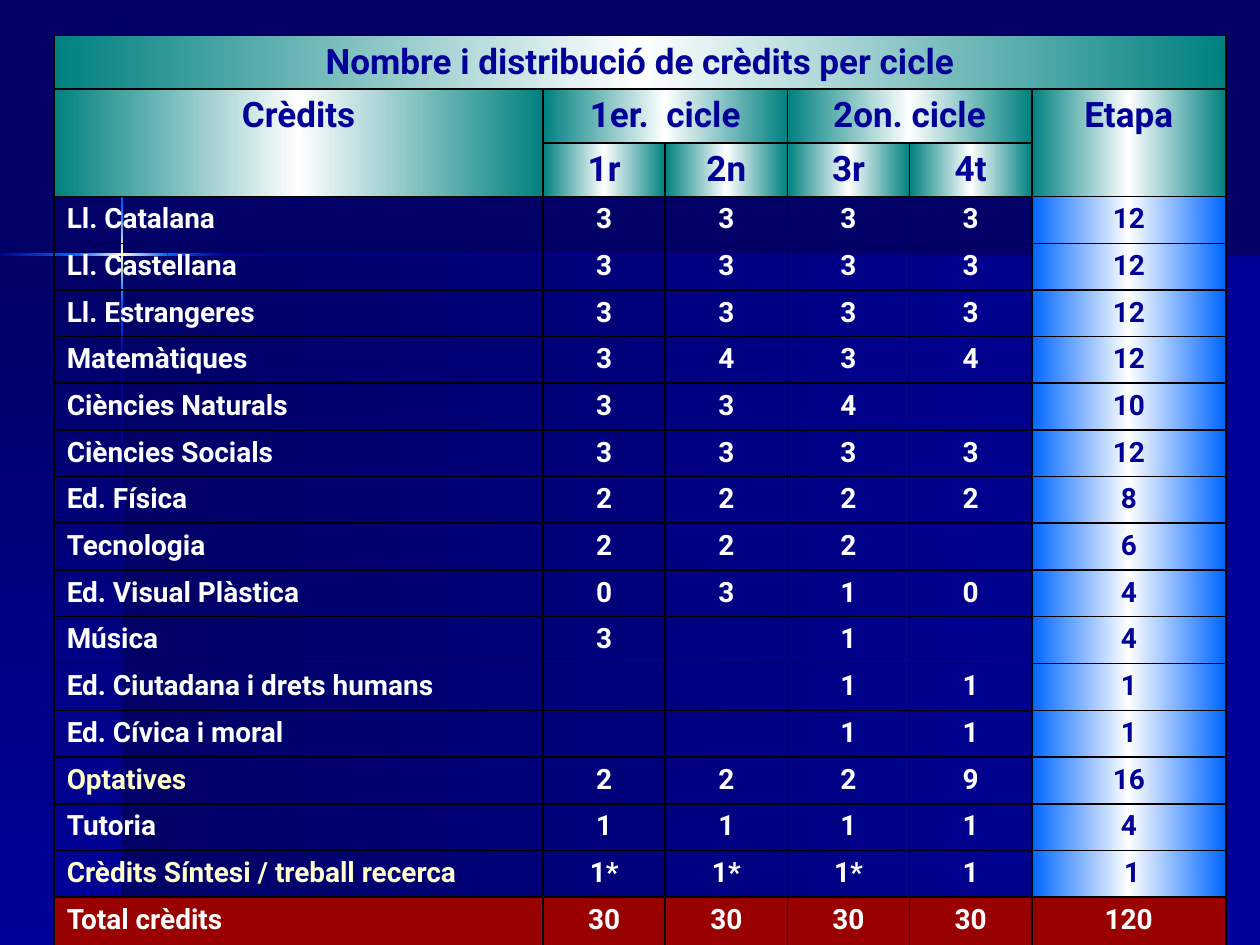
from itertools import pairwise

from lxml import etree
from pptx import Presentation
from pptx.dml.color import RGBColor
from pptx.enum.shapes import MSO_SHAPE
from pptx.enum.text import PP_ALIGN
from pptx.oxml.ns import qn
from pptx.util import Inches, Pt

RECT = MSO_SHAPE.RECTANGLE
CENTER, JUSTIFY = PP_ALIGN.CENTER, PP_ALIGN.JUSTIFY

THEME = {
    "font": "Roboto", "head": 20, "body": 16,
    "night": "000066", "deep": "000099", "bright": "0066FF", "cream": "FFFFCC",
    "white": "FFFFFF", "teal": "008080", "red": "990000", "line": "000000",
}


def gradient(fill, props, names, angle=0):
    fill.gradient()
    grad = props.find(qn("a:gradFill"))
    for child in list(grad):
        grad.remove(child)
    stops = etree.SubElement(grad, qn("a:gsLst"))
    for i, name in enumerate(names):
        stop = etree.SubElement(stops, qn("a:gs"), pos=str(i * 100000 // (len(names) - 1)))
        etree.SubElement(stop, qn("a:srgbClr"), val=THEME[name])
    etree.SubElement(grad, qn("a:lin"), ang=str(angle * 60000), scaled="0")


def write(cell, text, size="body", color="white", align=CENTER):
    p = cell.text_frame.paragraphs[0]
    p.alignment = align
    pPr = p._p.get_or_add_pPr()
    pPr.set("marL", str(Inches(0.38)))
    pPr.set("indent", str(-Inches(0.38)))
    if not text:
        etree.SubElement(p._p, qn("a:endParaRPr"), sz=str(THEME[size] * 100))
        return
    r = p.add_run()
    r.text = text
    r.font.name = THEME["font"]
    r.font.size = Pt(THEME[size])
    r.font.bold = True
    r.font.color.rgb = RGBColor.from_string(THEME[color])


prs = Presentation()
prs.slide_width, prs.slide_height = Inches(10), Inches(7.5)
s = prs.slides.add_slide(prs.slide_layouts[6])
s.background.fill.solid()
s.background.fill.fore_color.rgb = RGBColor.from_string(THEME["night"])

W, H = 10, 7.5
CROSS_X, CROSS_Y, BEAM = 0.97, 2.02, 0.02
FADE = [("deep", "bright"), ("bright", "cream", "bright"), ("bright", "deep"), ("deep", "night")]

bands = [
    (CROSS_X, CROSS_Y, W - CROSS_X, H - CROSS_Y, ("night", "deep"), 0),
    (0, CROSS_Y, CROSS_X, H - CROSS_Y, ("night", "deep"), 90),
]
for (top, bottom), names in zip(pairwise([0.01, 1.21, 1.65, 2.38, 2.82, H]), [("night", "deep")] + FADE):
    bands.append((CROSS_X - BEAM / 2, top, BEAM, bottom - top, names, 90))
for (left, right), names in zip(pairwise([0, 0.61, 1.33, 1.77, W]), FADE):
    bands.append((left, CROSS_Y - BEAM / 2, right - left, BEAM, names, 0))

for x, y, w, h, names, angle in bands:
    sp = s.shapes.add_shape(RECT, Inches(x), Inches(y), Inches(w), Inches(h))
    sp.shadow.inherit = False
    sp.line.fill.background()
    gradient(sp.fill, sp._element.spPr, names, angle)

rows = [
    ("Nombre i distribució de crèdits per cicle", "", "", "", "", ""),
    ("Crèdits", "1er.  cicle", "", "2on. cicle", "", "Etapa"),
    ("", "1r", "2n", "3r", "4t", ""),
    ("Ll. Catalana", "3", "3", "3", "3", "12"),
    ("Ll. Castellana", "3", "3", "3", "3", "12"),
    ("Ll. Estrangeres", "3", "3", "3", "3", "12"),
    ("Matemàtiques", "3", "4", "3", "4", "12"),
    ("Ciències Naturals", "3", "3", "4", "", "10"),
    ("Ciències Socials", "3", "3", "3", "3", "12"),
    ("Ed. Física", "2", "2", "2", "2", "8"),
    ("Tecnologia", "2", "2", "2", "", "6"),
    ("Ed. Visual Plàstica", "0", "3", "1", "0", "4"),
    ("Música", "3", "", "1", "", "4"),
    ("Ed. Ciutadana i drets humans", "", "", "1", "1", "1"),
    ("Ed. Cívica i moral", "", "", "1", "1", "1"),
    ("Optatives", "2", "2", "2", "9", "16"),
    ("Tutoria", "1", "1", "1", "1", "4"),
    ("Crèdits Síntesi / treball recerca", "1*", "1*", "1*", "1", " 1"),
    ("Total crèdits", "30", "30", "30", "30", "120"),
]
HEADS, LAST, STAGE = 3, len(rows) - 1, 5
HIGHLIGHTED = ("Optatives", "Crèdits Síntesi / treball recerca")
col_widths = [3.88] + [0.97] * 4 + [1.54]
row_heights = [0.41] * HEADS + [0.37] * (LAST - HEADS) + [0.41]

tbl = s.shapes.add_table(len(rows), len(col_widths), Inches(0.43), Inches(0.28),
                         Inches(sum(col_widths)), Inches(sum(row_heights))).table
tbl.first_row = tbl.horz_banding = False
for col, width in zip(tbl.columns, col_widths):
    col.width = Inches(width)
for row, height in zip(tbl.rows, row_heights):
    row.height = Inches(height)

for i, row in enumerate(rows):
    for j, text in enumerate(row):
        cell = tbl.cell(i, j)
        tcPr = cell._tc.get_or_add_tcPr()
        for side in ("lnL", "lnR", "lnT", "lnB"):
            ln = etree.SubElement(tcPr, qn("a:" + side), w=str(Pt(1)))
            solid = etree.SubElement(ln, qn("a:solidFill"))
            etree.SubElement(solid, qn("a:srgbClr"), val=THEME["line"])
        align = JUSTIFY if j == 0 else CENTER
        if i < HEADS:
            gradient(cell.fill, tcPr, ("teal", "white", "teal"))
            write(cell, text, size="head", color="deep")
        elif i == LAST:
            cell.fill.solid()
            cell.fill.fore_color.rgb = RGBColor.from_string(THEME["red"])
            write(cell, text, align=align)
        elif j == STAGE:
            gradient(cell.fill, tcPr, ("bright", "white", "bright"))
            write(cell, text, color="deep")
        else:
            cell.fill.background()
            write(cell, text, color="cream" if text in HIGHLIGHTED else "white", align=align)

for first, last in [((0, 0), (0, 5)), ((1, 0), (2, 0)), ((1, 1), (1, 2)), ((1, 3), (1, 4)), ((1, 5), (2, 5))]:
    tbl.cell(*first).merge(tbl.cell(*last))

prs.save("out.pptx")
